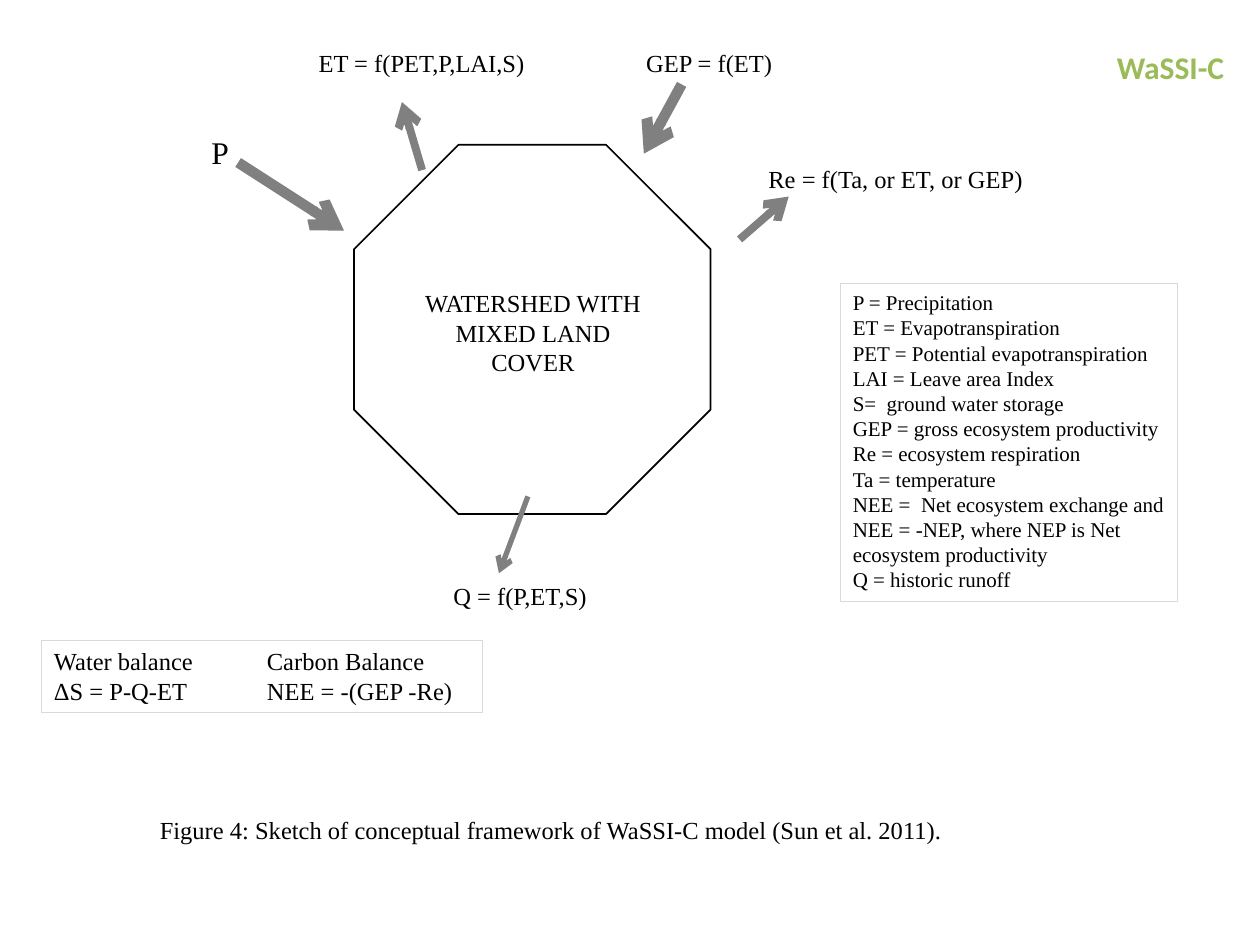
from dataclasses import dataclass

from lxml.etree import SubElement as Sub
from pptx import Presentation
from pptx.dml.color import RGBColor
from pptx.enum.shapes import MSO_CONNECTOR as Link, MSO_SHAPE as Kind
from pptx.enum.text import MSO_ANCHOR as Anchor, MSO_AUTO_SIZE as Fit, PP_ALIGN as Align
from pptx.oxml.ns import qn
from pptx.util import Emu, Pt

SCALE = 9144
BLACK = RGBColor(0x00, 0x00, 0x00)
GRAY = RGBColor(0x80, 0x80, 0x80)
PALE = RGBColor(0xD9, 0xD9, 0xD9)
GREEN = RGBColor(0x9B, 0xBB, 0x59)
SERIF = "Times New Roman"
FRAME = {"word_wrap": True, "auto_size": Fit.NONE, "vertical_anchor": Anchor.TOP}


@dataclass(frozen=True)
class Box:
    left: int
    top: int
    width: int
    height: int


@dataclass(frozen=True)
class Label:
    text: str
    box: Box
    size: int = 14
    align: Align = Align.LEFT


@dataclass(frozen=True)
class Panel:
    lines: tuple[str, ...]
    box: Box
    size: int
    tab: int = 0


@dataclass(frozen=True)
class Arrow:
    start: tuple[int, int]
    end: tuple[int, int]
    weight: float


LABELS = (
    Label("ET = f(PET,P,LAI,S)", Box(243, 33, 191, 34)),
    Label("GEP = f(ET)", Box(503, 33, 130, 34)),
    Label("Re = f(Ta, or ET, or GEP)", Box(600, 125, 225, 34)),
    Label("P", Box(158, 101, 38, 33), 18),
    Label("Q = f(P,ET,S)", Box(350, 456, 153, 34)),
    Label("WATERSHED WITH MIXED LAND COVER", Box(327, 224, 192, 66), align=Align.CENTER),
    Label("Figure 4: Sketch of conceptual framework of WaSSI-C model (Sun et al. 2011).",
          Box(117, 642, 683, 34)),
)
PANELS = (
    Panel(("Water balance\tCarbon Balance", "ΔS = P-Q-ET\tNEE = -(GEP -Re)"),
          Box(33, 508, 350, 57), 14, 169),
    Panel((
        "P = Precipitation",
        "ET = Evapotranspiration",
        "PET = Potential evapotranspiration",
        "LAI = Leave area Index",
        "S=  ground water storage",
        "GEP = gross ecosystem productivity",
        "Re = ecosystem respiration",
        "Ta = temperature",
        "NEE =  Net ecosystem exchange and NEE = -NEP, where NEP is Net ecosystem productivity",
        "Q = historic runoff",
    ), Box(667, 225, 267, 252), 12),
)
ARROWS = (
    Arrow((189, 129), (273, 183), 6),
    Arrow((541, 67), (511, 122), 6),
    Arrow((587, 190), (626, 156), 4.5),
    Arrow((335, 135), (319, 81), 4.5),
    Arrow((419, 394), (396, 455), 3),
)


def px(count: int) -> Emu:
    return Emu(count * SCALE)


def place(box: Box) -> tuple[Emu, ...]:
    return tuple(px(n) for n in (box.left, box.top, box.width, box.height))


def apply(target, values: dict) -> None:
    for name, value in values.items():
        setattr(target, name, value)


def write(shape, lines: tuple[str, ...], size: int, align=Align.LEFT,
          face=SERIF, color=BLACK, bold=False) -> None:
    frame = shape.text_frame
    frame.text = "\n".join(lines)
    apply(frame, FRAME)
    for para in frame.paragraphs:
        para.alignment = align
        for run in para.runs:
            apply(run.font, {"name": face, "size": Pt(size), "bold": bold})
            run.font.color.rgb = color


def draw_shape(slide, kind: Kind, box: Box, color: RGBColor, weight: float):
    shape = slide.shapes.add_shape(kind, *place(box))
    shape.shadow.inherit = False
    shape.fill.background()
    shape.line.color.rgb = color
    shape.line.width = Pt(weight)
    return shape


def draw_label(slide, label: Label) -> None:
    shape = slide.shapes.add_textbox(*place(label.box))
    write(shape, (label.text,), label.size, label.align)


def draw_panel(slide, panel: Panel) -> None:
    shape = draw_shape(slide, Kind.RECTANGLE, panel.box, PALE, 0.25)
    write(shape, panel.lines, panel.size)
    if panel.tab:
        for props in shape.element.iter(qn("a:pPr")):
            tabs = Sub(props, qn("a:tabLst"))
            Sub(tabs, qn("a:tab"), pos=str(px(panel.tab)), algn="l")


def draw_arrow(slide, arrow: Arrow) -> None:
    ends = [px(n) for n in arrow.start + arrow.end]
    link = slide.shapes.add_connector(Link.STRAIGHT, *ends)
    link.line.color.rgb = GRAY
    link.line.width = Pt(arrow.weight)
    props = link.element.spPr
    Sub(props.find(qn("a:ln")), qn("a:tailEnd"), type="arrow")
    Sub(props, qn("a:effectLst"))


def draw_title(slide) -> None:
    title = slide.shapes.title
    spots = place(Box(858, 33, 142, 40))
    apply(title, dict(zip(("left", "top", "width", "height"), spots)))
    write(title, ("WaSSI-C",), 18, Align.CENTER, "Calibri", GREEN, True)


def main() -> None:
    deck = Presentation()
    apply(deck, {"slide_width": px(1000), "slide_height": px(750)})
    slide = deck.slides.add_slide(deck.slide_layouts[5])
    draw_title(slide)
    draw_shape(slide, Kind.OCTAGON, Box(281, 115, 283, 293), BLACK, 1)
    for arrow in ARROWS:
        draw_arrow(slide, arrow)
    for label in LABELS:
        draw_label(slide, label)
    for panel in PANELS:
        draw_panel(slide, panel)
    deck.save("out.pptx")


if __name__ == "__main__":
    main()
